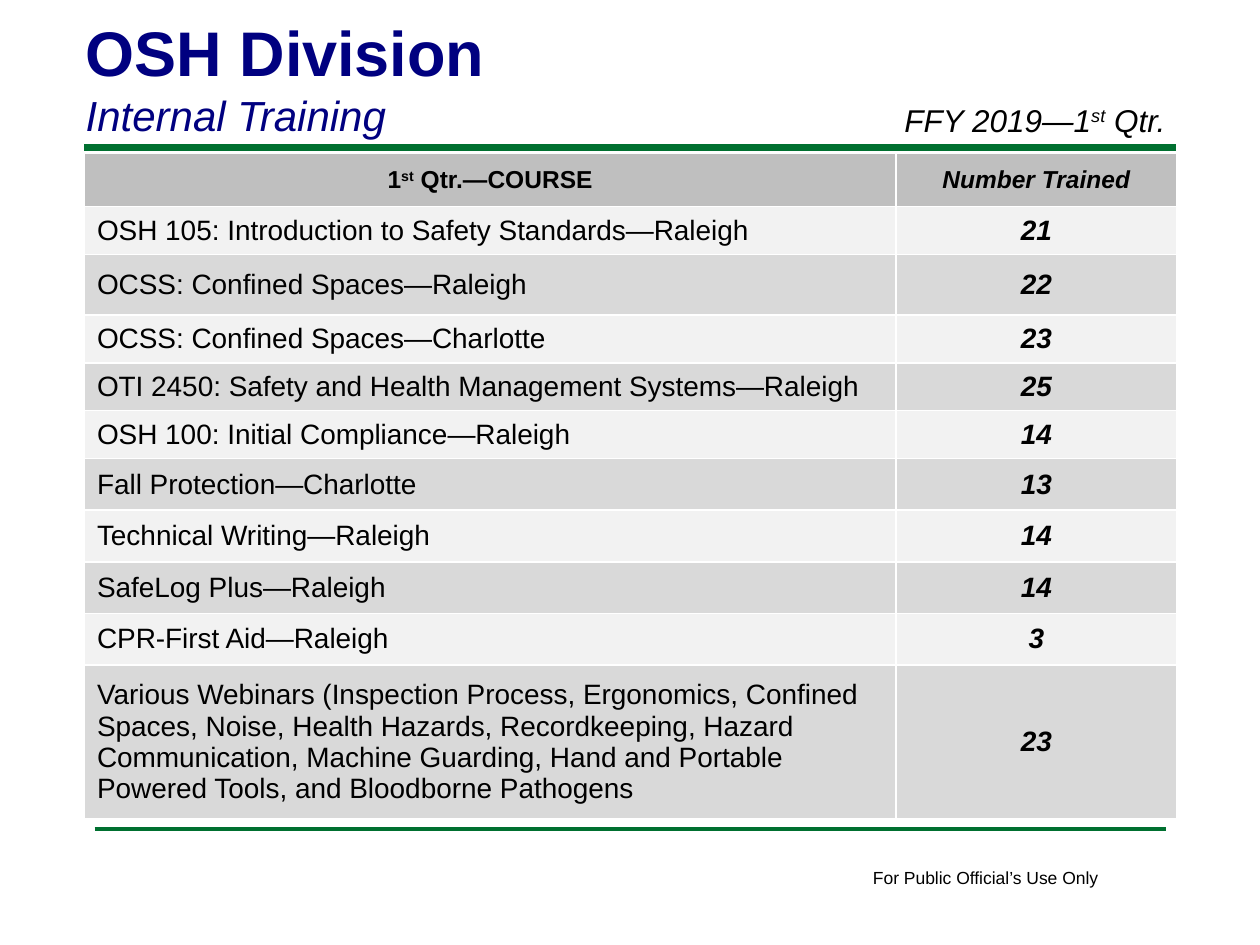
from pptx import Presentation
from pptx.dml.color import RGBColor as RGB
from pptx.enum.shapes import MSO_CONNECTOR as Line
from pptx.enum.text import MSO_ANCHOR as Anchor, MSO_AUTO_SIZE as Fit, PP_ALIGN as Align
from pptx.util import Inches, Pt
from lxml.etree import SubElement

HUES = {
    "green": "007030",
    "navy": "000080",
    "black": "000000",
    "head": "BFBFBF",
    "light": "F2F2F2",
    "dark": "D9D9D9",
}
WIDTHS = [6.44, 2.23]
HEIGHTS = [0.42, 0.38, 0.48] + [0.38] * 3 + [0.41] * 4 + [1.22]
COURSES = [
    ("OSH 105: Introduction to Safety Standards—Raleigh", 21),
    ("OCSS: Confined Spaces—Raleigh", 22),
    ("OCSS: Confined Spaces—Charlotte", 23),
    ("OTI 2450: Safety and Health Management Systems—Raleigh", 25),
    ("OSH 100: Initial Compliance—Raleigh", 14),
    ("Fall Protection—Charlotte", 13),
    ("Technical Writing—Raleigh", 14),
    ("SafeLog Plus—Raleigh", 14),
    ("CPR-First Aid—Raleigh", 3),
    ("Various Webinars (Inspection Process, Ergonomics, Confined Spaces, "
     "Noise, Health Hazards, Recordkeeping, Hazard Communication, Machine "
     "Guarding, Hand and Portable Powered Tools, and Bloodborne Pathogens", 23),
]


def color(name):
    return RGB.from_string(HUES[name])


def add_run(para, text, size, hue="black", bold=False, italic=False, sup=False):
    run = para.add_run()
    run.text = text
    font = run.font
    font.name = "Arial"
    font.size = Pt(size)
    font.bold = bold
    font.italic = italic
    font.color.rgb = color(hue)
    if sup:
        run._r.get_or_add_rPr().set("baseline", "30000")


def add_date(para, start, end, size, **style):
    add_run(para, start, size, **style)
    add_run(para, "st", size, sup=True, **style)
    add_run(para, end, size, **style)


def add_rule(slide, left, right, top, width):
    rule = slide.shapes.add_connector(
        Line.STRAIGHT, Inches(left), Inches(top), Inches(right), Inches(top))
    rule.line.color.rgb = color("green")
    rule.line.width = Pt(width)
    props = rule._element.spPr
    SubElement(props, props.tag.replace("}spPr", "}effectLst").replace(
        "presentationml", "drawingml"))


def add_box(slide, left, top, width, height, wrap=True):
    box = slide.shapes.add_textbox(
        Inches(left), Inches(top), Inches(width), Inches(height))
    box.text_frame.word_wrap = wrap
    return box.text_frame.paragraphs[0]


def set_title(slide):
    title = slide.shapes.title
    title.left, title.top = Inches(0.58), Inches(0.06)
    title.width, title.height = Inches(8.25), Inches(1.11)
    frame = title.text_frame
    frame.auto_size = Fit.NONE
    frame.vertical_anchor = Anchor.TOP
    first, second = frame.paragraphs[0], frame.add_paragraph()
    first.alignment = second.alignment = Align.LEFT
    add_run(first, "OSH Division", 36, "navy", bold=True)
    add_run(second, "Internal Training", 24, "navy", italic=True)


def style_cell(cell, hue, align):
    cell.fill.solid()
    cell.fill.fore_color.rgb = color(hue)
    cell.vertical_anchor = Anchor.MIDDLE
    para = cell.text_frame.paragraphs[0]
    para.alignment = align
    return para


def add_grid(slide):
    grid = slide.shapes.add_table(
        len(HEIGHTS), len(WIDTHS), Inches(0.67), Inches(1.22),
        Inches(sum(WIDTHS)), Inches(sum(HEIGHTS))).table
    for col, width in zip(grid.columns, WIDTHS):
        col.width = Inches(width)
    for row, height in zip(grid.rows, HEIGHTS):
        row.height = Inches(height)
    para = style_cell(grid.cell(0, 0), "head", Align.CENTER)
    add_date(para, "1", " Qtr.—COURSE", 14, bold=True)
    para = style_cell(grid.cell(0, 1), "head", Align.CENTER)
    add_run(para, "Number Trained", 14, bold=True, italic=True)
    for row, (course, count) in enumerate(COURSES, 1):
        hue = "light" if row % 2 else "dark"
        para = style_cell(grid.cell(row, 0), hue, Align.LEFT)
        add_run(para, course, 16)
        para = style_cell(grid.cell(row, 1), hue, Align.CENTER)
        add_run(para, str(count), 16, bold=True, italic=True)


def main():
    deck = Presentation()
    deck.slide_width, deck.slide_height = Inches(10), Inches(7.5)
    slide = deck.slides.add_slide(deck.slide_layouts[5])
    add_rule(slide, 0.67, 9.33, 1.17, 4)
    add_rule(slide, 0.75, 9.25, 6.58, 2)
    note = add_box(slide, 6.83, 6.83, 2.01, 0.27, wrap=False)
    add_run(note, "For Public Official’s Use Only", 10)
    add_grid(slide)
    set_title(slide)
    date = add_box(slide, 7.08, 0.75, 2.5, 0.4)
    add_date(date, "FFY 2019—1", " Qtr.", 18, italic=True)
    deck.save("out.pptx")


if __name__ == "__main__":
    main()
